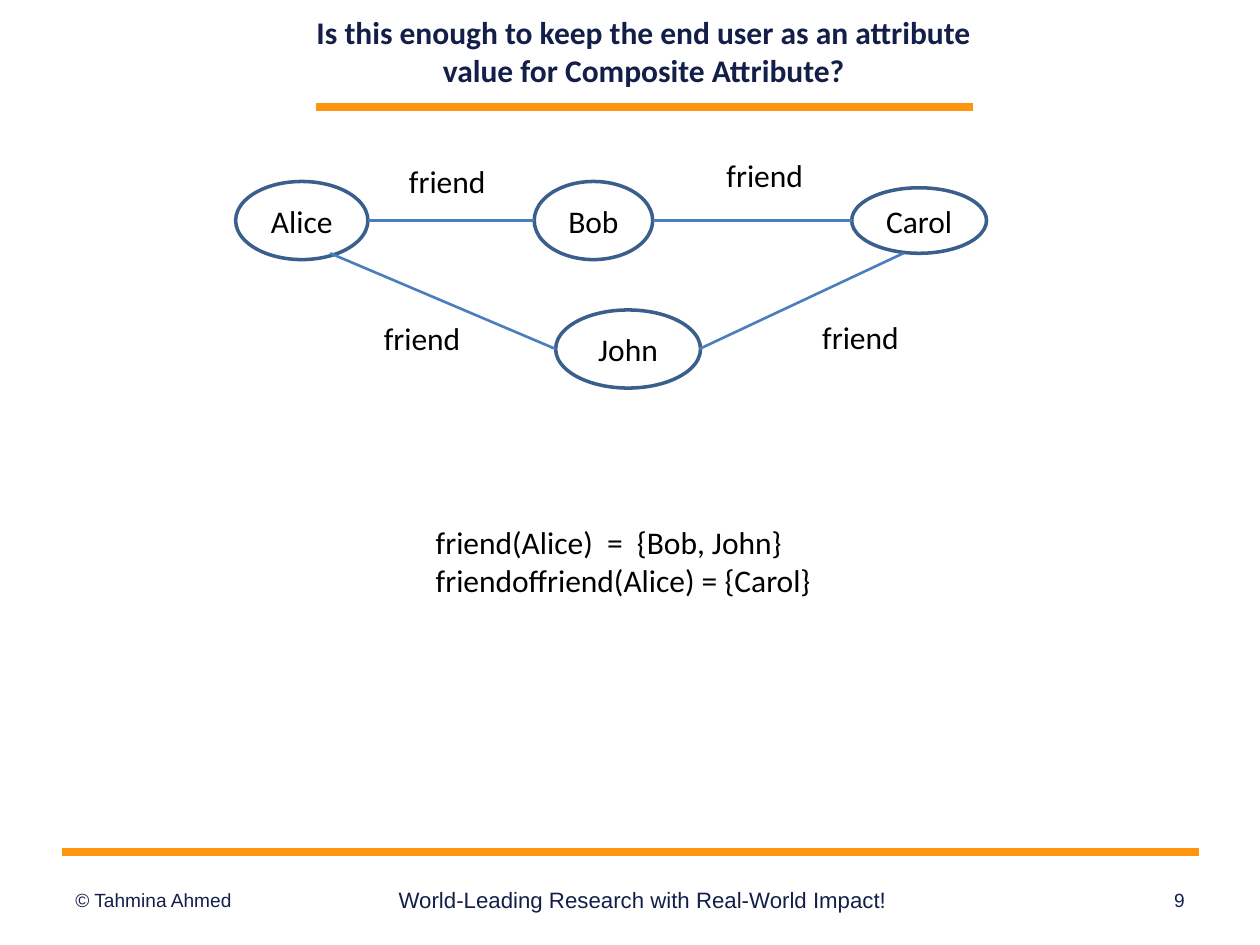
from lxml.etree import SubElement
from pptx import Presentation
from pptx.dml.color import RGBColor
from pptx.enum.shapes import MSO_CONNECTOR, MSO_SHAPE
from pptx.enum.text import MSO_ANCHOR, PP_ALIGN
from pptx.oxml.ns import qn
from pptx.util import Inches, Pt

NAVY, ORANGE, BLACK, WHITE = "131F49", "FF950E", "000000", "FFFFFF"
OUTLINE, EDGE = "3A5F8C", "4B7EBC"
LEFT, CENTER, RIGHT = PP_ALIGN.LEFT, PP_ALIGN.CENTER, PP_ALIGN.RIGHT

TITLE = "Is this enough to keep the end user as an attribute value for Composite Attribute?"
FORMULAS = ["friend(Alice)  =  {Bob, John}", "friendoffriend(Alice) = {Carol}"]
FOOTERS = [
    ("© Tahmina Ahmed", 0.5, 2.33, 10.9, LEFT),
    ("World-Leading Research with Real-World Impact!", 3.03, 4.14, 12.7, CENTER),
    ("9", 7.35, 2.15, 10.9, RIGHT),
]
PEOPLE = [
    ("Alice", 1.87, 1.44, 1.05, 0.62),
    ("Bob", 4.24, 1.44, 0.94, 0.62),
    ("Carol", 6.76, 1.49, 1.07, 0.52),
    ("John", 4.41, 2.46, 1.15, 0.62),
]
FRIEND_LABELS = [(3.03, 1.18), (5.55, 1.13), (2.83, 2.43), (6.31, 2.42)]
RULES = [(2.51, 0.85, 7.72, 0.85), (0.49, 6.76, 9.52, 6.76)]
FRIENDSHIPS = [
    (2.92, 1.75, 4.24, 1.75),
    (5.18, 1.75, 6.76, 1.75),
    (2.62, 2.01, 4.41, 2.77),
    (5.55, 2.77, 7.17, 2.01),
]

prs = Presentation()
prs.slide_width, prs.slide_height = Inches(10), Inches(7.5)
s = prs.slides.add_slide(prs.slide_layouts[6])


def rgb(value):
    return RGBColor.from_string(value)


def write(sp, text, size=18, font="Calibri", color=BLACK, bold=False,
          align=CENTER, anchor=MSO_ANCHOR.MIDDLE):
    tf = sp.text_frame
    tf.word_wrap = True
    tf.vertical_anchor = anchor
    lines = [text] if isinstance(text, str) else text
    for i, line in enumerate(lines):
        p = tf.add_paragraph() if i else tf.paragraphs[0]
        p.alignment = align
        r = p.add_run()
        r.text = line
        r.font.size, r.font.name, r.font.bold = Pt(size), font, bold
        r.font.color.rgb = rgb(color)


def add_text(box, text, **fmt):
    write(s.shapes.add_textbox(*map(Inches, box)), text, **fmt)


def add_node(kind, box, text, fill=None, line=None):
    sp = s.shapes.add_shape(kind, *map(Inches, box))
    sp.shadow.inherit = False
    if fill:
        sp.fill.solid()
        sp.fill.fore_color.rgb = rgb(fill)
    else:
        sp.fill.background()
    if line:
        sp.line.color.rgb = rgb(line)
        sp.line.width = Pt(2)
    else:
        sp.line.fill.background()
    write(sp, text)


def add_line(ends, color, width):
    cx = s.shapes.add_connector(MSO_CONNECTOR.STRAIGHT, *map(Inches, ends))
    cx.line.color.rgb = rgb(color)
    cx.line.width = Pt(width)
    SubElement(cx._element.spPr, qn("a:effectLst"))


for ends in RULES:
    add_line(ends, ORANGE, 4.31)
add_text((2.28, 0.06, 5.66, 0.69), TITLE, color=NAVY, bold=True)
for text, x, w, size, align in FOOTERS:
    add_text((x, 6.94, w, 0.4), text, size=size, font="Arial", color=NAVY, align=align)
for x, y in FRIEND_LABELS:
    add_node(MSO_SHAPE.RECTANGLE, (x, y, 1.04, 0.51), "friend", fill=WHITE)
for name, *box in PEOPLE:
    add_node(MSO_SHAPE.OVAL, box, name, line=OUTLINE)
add_text((3.36, 4.1, 3.23, 0.71), FORMULAS, align=LEFT, anchor=MSO_ANCHOR.TOP)
for ends in FRIENDSHIPS:
    add_line(ends, EDGE, 1.5)

prs.save("out.pptx")
